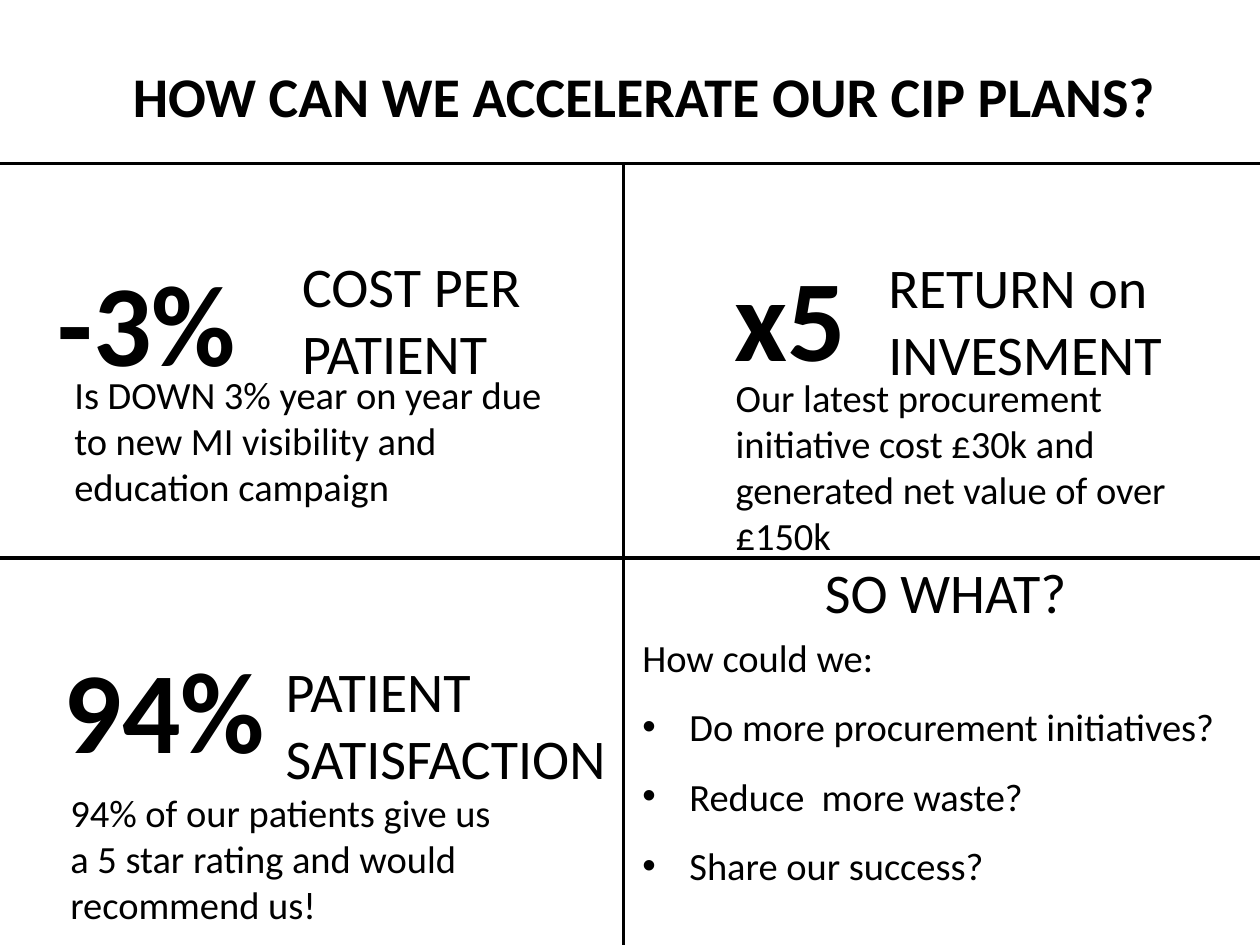
from dataclasses import dataclass

from lxml.etree import SubElement
from pptx import Presentation
from pptx.dml.color import RGBColor
from pptx.enum.shapes import MSO_CONNECTOR
from pptx.enum.text import MSO_ANCHOR, PP_ALIGN
from pptx.oxml.ns import qn
from pptx.util import Cm, Pt


@dataclass(frozen=True)
class Theme:
    font: str = "Calibri"
    ink: RGBColor = RGBColor(0, 0, 0)
    paper: RGBColor = RGBColor(255, 255, 255)
    figure: int = 66
    heading: int = 32
    body: int = 22
    rule: int = 2


WIDTH, HEIGHT = 25.4, 19.05
MID_X, TOP_Y, MID_Y = 12.57, 3.3, 11.25
INSET, INDENT = 0.1, 0.95

# Each panel: (text, box) for the figure, the heading lines and the description
PANELS = [
    # The large trailing space sets the line height of the first figure
    (("-3%", (1.07, 4.62, 4.5, 3.28), 80),
     (["COST PER PATIENT"], (5.99, 5.59, 6.65, 1.68)),
     ("Is DOWN 3% year on year due to new MI visibility and education campaign",
      (1.4, 8.36, 9.86, 1.02))),
    (("x5", (14.71, 4.72, 4.5, 3.28), None),
     (["RETURN on", "INVESMENT"], (17.81, 5.61, 6.65, 1.68)),
     ("Our latest procurement initiative cost £30k and generated net value of over £150k",
      (14.73, 8.33, 8.92, 2.13))),
    (("94%", (1.19, 12.62, 4.5, 3.28), None),
     (["PATIENT", "SATISFACTION"], (5.66, 13.41, 7.06, 2.36)),
     ("94% of our patients give us a 5 star rating and would recommend us!",
      (1.32, 16.23, 8.92, 2.13))),
]

QUESTIONS = ["Do more procurement initiatives?", "Reduce  more waste?", "Share our success?"]


def apply(obj, values):
    for name, value in values.items():
        setattr(obj, name, value)


class Deck:
    """Holds the theme and the slide being drawn."""

    def __init__(self, theme):
        self.theme = theme
        self.prs = Presentation()
        apply(self.prs, {"slide_width": Cm(WIDTH), "slide_height": Cm(HEIGHT)})
        self.s = self.prs.slides.add_slide(self.prs.slide_layouts[6])
        fill = self.s.background.fill
        fill.solid()
        fill.fore_color.rgb = theme.paper

    def rule(self, x1, y1, x2, y2):
        line = self.s.shapes.add_connector(
            MSO_CONNECTOR.STRAIGHT, Cm(x1), Cm(y1), Cm(x2), Cm(y2))
        line.line.color.rgb = self.theme.ink
        line.line.width = Pt(self.theme.rule)
        SubElement(line._element.spPr, qn("a:effectLst"))

    def run(self, p, text, size, bold=False):
        r = p.add_run()
        r.text = text
        apply(r.font, {"name": self.theme.font, "size": Pt(size), "bold": bold})
        r.font.color.rgb = self.theme.ink

    def text(self, lines, box, size, bold=False, align=PP_ALIGN.LEFT,
             spacing=None, parent=None):
        """Add a middle-anchored text box, one paragraph per line."""
        shapes = (parent or self.s).shapes
        tf = shapes.add_textbox(*map(Cm, box)).text_frame
        apply(tf, {"word_wrap": True, "vertical_anchor": MSO_ANCHOR.MIDDLE})
        apply(tf, {f"margin_{side}": Cm(INSET)
                   for side in ("left", "right", "top", "bottom")})
        for i, line in enumerate(lines):
            p = tf.add_paragraph() if i else tf.paragraphs[0]
            apply(p, {"alignment": align, "line_spacing": spacing})
            self.run(p, line, size, bold)
        return tf

    def bullet(self, p):
        pPr = p._p.get_or_add_pPr()
        pPr.set("marL", str(Cm(INDENT)))
        pPr.set("indent", str(-Cm(INDENT)))
        SubElement(pPr, qn("a:buFont"), typeface="Arial")
        SubElement(pPr, qn("a:buChar"), char="•")

    def panel(self, figure, heading, description):
        group = self.s.shapes.add_group_shape()
        value, box, space_size = figure
        tf = self.text([value], box, self.theme.figure, bold=True, parent=group)
        if space_size:
            self.run(tf.paragraphs[0], " ", space_size, bold=True)
        lines, box = heading
        self.text(lines, box, self.theme.heading, parent=group)
        words, box = description
        self.text([words], box, self.theme.body, parent=group)


def main():
    theme = Theme()
    deck = Deck(theme)
    deck.rule(MID_X, TOP_Y, MID_X, HEIGHT)
    deck.rule(0, MID_Y, WIDTH, MID_Y)
    deck.rule(0, TOP_Y, WIDTH, TOP_Y)

    deck.text(["HOW CAN WE ACCELERATE OUR CIP PLANS?"], (0.76, 1.07, 24.46, 1.68),
              theme.heading, bold=True, align=PP_ALIGN.CENTER)
    deck.text(["SO WHAT?"], (14.71, 11.07, 8.71, 1.68),
              theme.heading, align=PP_ALIGN.CENTER)
    tf = deck.text(["How could we:", *QUESTIONS], (12.85, 12.75, 12.14, 4.72),
                   theme.body, spacing=1.5)
    for p in tf.paragraphs[1:]:
        deck.bullet(p)

    for panel in PANELS:
        deck.panel(*panel)
    deck.prs.save("out.pptx")


if __name__ == "__main__":
    main()
